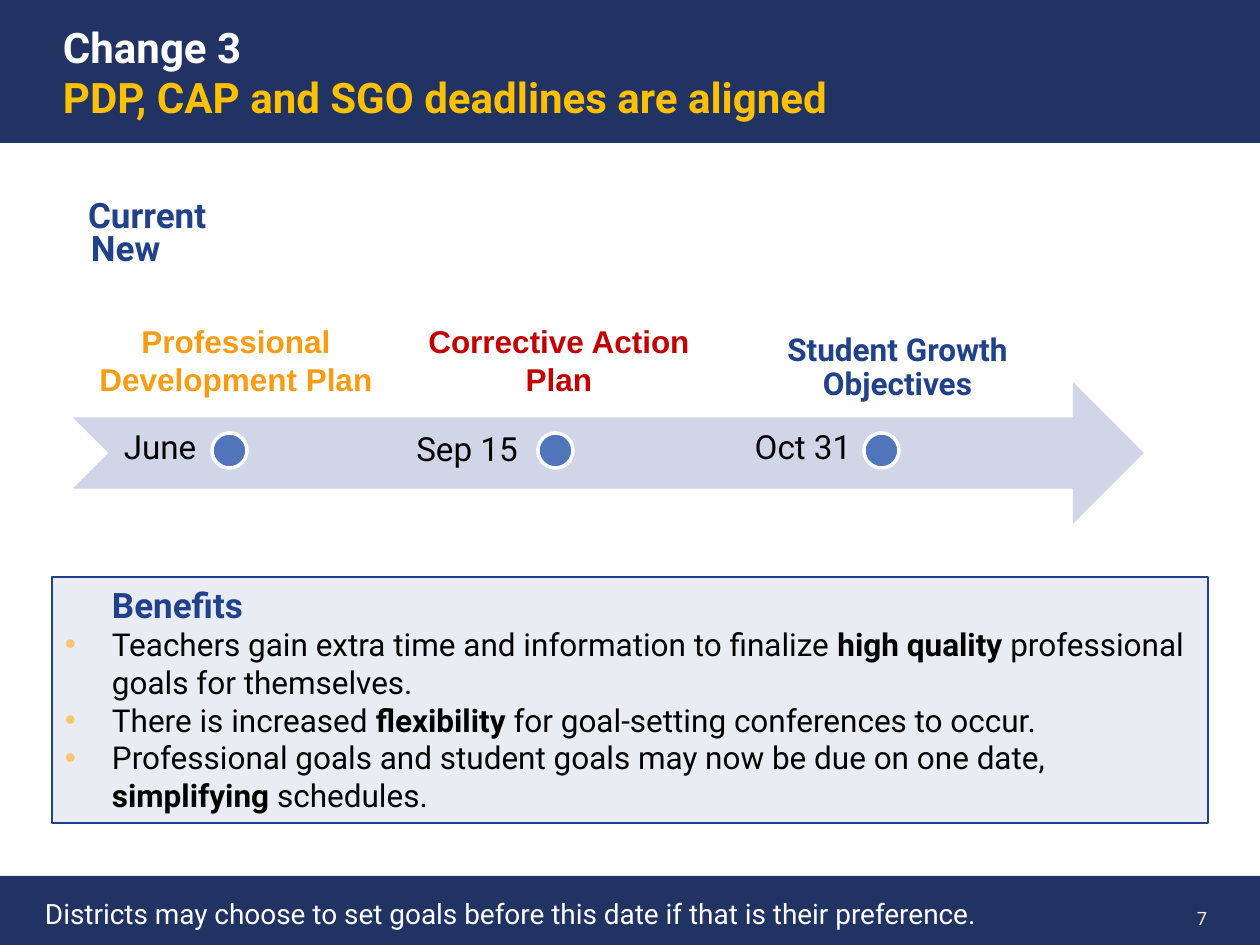
import pptx
import pptx.util
import pptx.dml.color
from lxml import etree
from pptx.enum.shapes import MSO_SHAPE
from pptx.enum.text import MSO_ANCHOR, PP_ALIGN
from pptx.oxml.ns import qn

PX_PER_INCH = 126
WIDTH, HEIGHT = 1260, 945
NAVY, BLUE, WHITE, BLACK = "213363", "214189", "FFFFFF", "000000"


def px(length):
    return pptx.util.Emu(round(length * 914400 / PX_PER_INCH))


def color(hex_value):
    return pptx.dml.color.RGBColor.from_string(hex_value)


def add_shape(slide, kind, box, fill, line=None, line_width=1):
    shape = slide.shapes.add_shape(kind, *map(px, box))
    shape.shadow.inherit = False
    shape.fill.solid()
    shape.fill.fore_color.rgb = color(fill)
    if line:
        shape.line.color.rgb = color(line)
        shape.line.width = pptx.util.Pt(line_width)
    else:
        shape.line.fill.background()
    return shape


def set_frame(shape, margins=(13, 6, 13, 6), anchor=MSO_ANCHOR.TOP):
    frame = shape.text_frame
    frame.word_wrap = True
    frame.vertical_anchor = anchor
    (frame.margin_left, frame.margin_top,
     frame.margin_right, frame.margin_bottom) = map(px, margins)
    return frame


def set_font(paragraph, size, hex_value, bold=False, name="Roboto"):
    font = paragraph.font
    font.name, font.size, font.bold = name, pptx.util.Pt(size), bold
    font.color.rgb = color(hex_value)


def add_text(slide, box, text, size, hex_value, bold=False, name="Roboto",
             align=PP_ALIGN.LEFT, spacing=None, **frame_options):
    text_box = slide.shapes.add_textbox(*map(px, box))
    paragraph = set_frame(text_box, **frame_options).paragraphs[0]
    paragraph.alignment = align
    if spacing:
        paragraph.line_spacing = spacing
    paragraph.add_run().text = text
    set_font(paragraph, size, hex_value, bold, name)


def set_indent(paragraph, margin, bullet_color=None):
    properties = paragraph._p.get_or_add_pPr()
    properties.set("marL", str(px(margin)))
    properties.set("indent", str(px(-margin if bullet_color else 0)))
    if bullet_color:
        holder = etree.SubElement(properties, qn("a:buClr"))
        etree.SubElement(holder, qn("a:srgbClr"), val=bullet_color)
        etree.SubElement(properties, qn("a:buFont"), typeface="Arial")
        etree.SubElement(properties, qn("a:buChar"), char="•")


def add_header(slide, box):
    header = add_shape(slide, MSO_SHAPE.RECTANGLE, box, NAVY)
    frame = set_frame(header, (63, 6, 13, 6), MSO_ANCHOR.MIDDLE)
    paragraph = frame.paragraphs[0]
    paragraph.alignment = PP_ALIGN.LEFT
    paragraph.add_run().text = "Change 3"
    paragraph.add_line_break()
    subtitle = paragraph.add_run()
    subtitle.text = "PDP, CAP and SGO deadlines are aligned"
    set_font(paragraph, 24, WHITE, bold=True)
    subtitle.font.color.rgb = color("FFC000")


def add_legend(slide, box):
    left, top, width, height = box
    for text, dx, dy in (("Current", 0, 0), ("New", 3, 33)):
        add_text(slide, (left + dx, top + dy, width, height), text,
                 20, BLUE, bold=True, spacing=1.2)


def add_timeline(slide, box):
    left, top, width, height = box
    add_shape(slide, MSO_SHAPE.NOTCHED_RIGHT_ARROW, box, "D0D6E7")
    dot_size, dot_step = 35, 326

    # Date, its box offset, then label, its box offset and size, colour, font
    milestones = (
        ("June", (-23, 31), "Professional Development Plan",
         (-31, -66, 388, 89), "F89C15", "Arial", {}),
        ("Sep 15", (284, 33), "Corrective Action Plan",
         (330, -66, 312, 89), "C00000", "Arial", {}),
        ("Oct 31", (620, 31), "Student Growth Objectives",
         (669, -63, 311, 101), BLUE, "Roboto",
         dict(spacing=0.9, margins=(18,) * 4, anchor=MSO_ANCHOR.BOTTOM)),
    )
    for index, (date, (date_x, date_y), label, label_box,
                label_color, font_name, options) in enumerate(milestones):
        add_shape(slide, MSO_SHAPE.OVAL,
                  (left + 139 + index * dot_step, top + 51, dot_size, dot_size),
                  "5075BB", WHITE, 2)
        add_text(slide, (left + date_x, top + date_y, 220, 63), date, 19, BLACK,
                 align=PP_ALIGN.CENTER, spacing=0.9, margins=(19,) * 4)
        x, y, label_width, label_height = label_box
        add_text(slide, (left + x, top + y, label_width, label_height), label,
                 18, label_color, bold=True, name=font_name,
                 align=PP_ALIGN.CENTER, **options)


def add_benefits(slide, box):
    panel = add_shape(slide, MSO_SHAPE.RECTANGLE, box, "E9ECF3", BLUE, 0.75)
    frame = set_frame(panel)
    heading = frame.paragraphs[0]
    heading.alignment = PP_ALIGN.LEFT
    set_indent(heading, 47)
    heading.add_run().text = "Benefits"
    set_font(heading, 20, BLUE, bold=True)

    # Each benefit: text before, bold words, text after
    benefits = (
        ("Teachers gain extra time and information to finalize ",
         "high quality ", "professional goals for themselves."),
        ("There is increased ", "flexibility",
         " for goal-setting conferences to occur."),
        ("Professional goals and student goals may now be due on one date, ",
         "simplifying", " schedules."),
    )
    for parts in benefits:
        paragraph = frame.add_paragraph()
        paragraph.alignment = PP_ALIGN.LEFT
        set_indent(paragraph, 47, "FBC473")
        set_font(paragraph, 18, BLACK)
        for index, part in enumerate(parts):
            run = paragraph.add_run()
            run.text = part
            if index == 1:
                run.font.bold = True


def add_footer(slide, box):
    left, top, width, height = box
    add_shape(slide, MSO_SHAPE.RECTANGLE, box, NAVY)
    add_text(slide, (left + 32, top + 15, 964, 50),
             "Districts may choose to set goals before this date "
             "if that is their preference.", 16, WHITE)
    add_text(slide, (left + 1036, top + 17, 184, 50), "7", 10.5, "FEEBD0",
             align=PP_ALIGN.RIGHT, anchor=MSO_ANCHOR.MIDDLE)


def main():
    presentation = pptx.Presentation()
    presentation.slide_width, presentation.slide_height = px(WIDTH), px(HEIGHT)
    slide = presentation.slides.add_slide(presentation.slide_layouts[6])
    add_header(slide, (0, 0, WIDTH, 143))
    add_legend(slide, (75, 179, 160, 62))
    add_timeline(slide, (73, 382, 1071, 142))
    add_benefits(slide, (52, 577, 1156, 246))
    add_footer(slide, (0, 876, WIDTH, 69))
    presentation.save("out.pptx")


if __name__ == "__main__":
    main()
